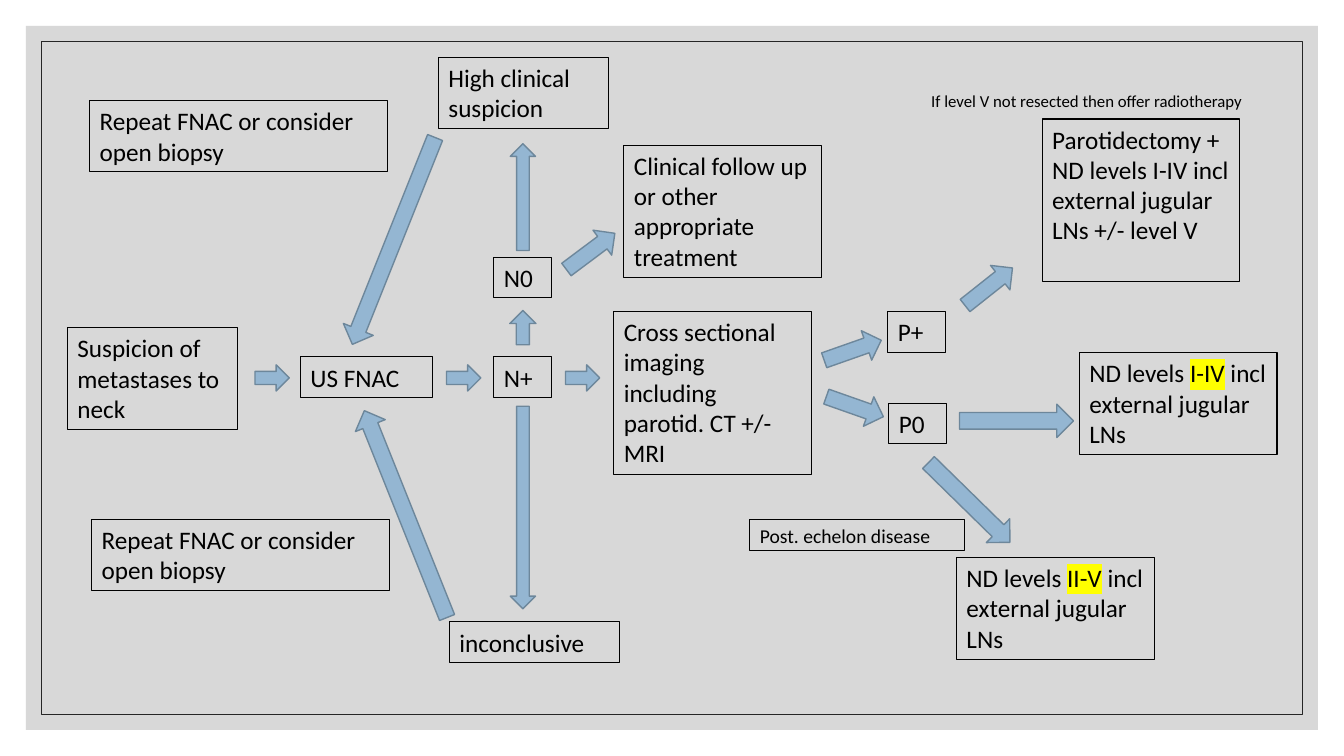
from lxml import etree
from pptx import Presentation
from pptx.dml.color import RGBColor
from pptx.enum.shapes import MSO_SHAPE
from pptx.enum.text import MSO_ANCHOR, PP_ALIGN
from pptx.oxml.ns import qn
from pptx.util import Pt

RECTANGLE = MSO_SHAPE.RECTANGLE
RIGHT_ARROW = MSO_SHAPE.RIGHT_ARROW
TOP = MSO_ANCHOR.TOP
LEFT = PP_ALIGN.LEFT

THEME = {
    "font": "Calibri",
    "step_size": 18,
    "remark_size": 14,
    "note_size": 12,
    "text": "000000",
    "panel": "BFBFBF",
    "panel_opacity": 60,
    "frame": "262626",
    "arrow": "94B6D2",
    "arrow_edge": "6D879B",
    "highlight": "FFFF00",
}

SLIDE_WIDTH, SLIDE_HEIGHT = 960, 540
PANEL_MARGIN, FRAME_MARGIN = 18.6, 29.4

# Box widths
MARK, SITE, STEP, PLAN, ADVICE = 41, 94.3, 121.7, 141.1, 212.4
# Text line height and the padding above and below it
LINE_HEIGHT, PADDING = 21.8, 7.2

# left, top, width, lines of room, text pieces (a tuple holds a highlighted piece)
STEPS = [
    (48.2, 234, STEP, 3, ["Suspicion of metastases to neck"]),
    (214.6, 254.9, SITE, 1, ["US FNAC"]),
    (352.8, 254.9, MARK, 1, ["N+"]),
    (352.8, 183.6, MARK, 1, ["N0"]),
    (321.1, 444.2, STEP, 1, ["inconclusive"]),
    (313.2, 41, STEP, 2, ["High clinical suspicion"]),
    (64.1, 72, ADVICE, 2, ["Repeat FNAC or consider open biopsy"]),
    (65.5, 370.8, ADVICE, 2, ["Repeat FNAC or consider open biopsy"]),
    (445.7, 103.7, PLAN, 4, ["Clinical follow up or other appropriate treatment"]),
    (438.5, 222.5, PLAN, 5, ["Cross sectional imaging including parotid. CT +/-MRI"]),
    (634.3, 222.5, MARK, 1, ["P+"]),
    (635, 288, MARK, 1, ["P0"]),
    (744.5, 85, PLAN, 5,
     ["Parotidectomy + ND levels I-IV incl external jugular LNs +/- level V"]),
    (771.1, 252, PLAN, 3, ["ND levels ", ("I-IV",), " incl external jugular LNs"]),
    (683.3, 398.2, PLAN, 3, ["ND levels ", ("II-V",), " incl external jugular LNs"]),
]
REMARK = (535.7, 370.8, 153.4, 22.3, ["Post. echelon disease"])
NOTE = (658.1, 61.2, 253.4, 36, ["If level V not resected then offer radiotherapy"])

# Arrow length and thickness
HOP, BRANCH, REACH, RETURN = (24.5, 18.7), (43.2, 22.3), (81.4, 23.8), (159.1, 23)
RISE, DROP = (76.3, 18), (144.7, 18)
MAIN_ROW, NODE_COLUMN = 270, 373.5

# centre x, centre y, size, clockwise angle
ARROWS = [
    (194.4, MAIN_ROW, HOP, 0),
    (331.2, MAIN_ROW, HOP, 0),
    (416.2, MAIN_ROW, HOP, 0),
    (NODE_COLUMN, 234, HOP, 270),
    (NODE_COLUMN, 140.8, RISE, 270),
    (NODE_COLUMN, 362.5, DROP, 90),
    (289.8, 367.2, RETURN, 248.2),
    (281.2, 172.1, RETURN, 111.8),
    (421.9, 179.6, BRANCH, 323.2),
    (609.1, 250.2, BRANCH, 340.6),
    (610.6, 290.5, BRANCH, 19.4),
    (706.3, 204.8, BRANCH, 321.6),
    (726.1, 300.6, REACH, 0),
    (692.3, 358.9, REACH, 44.4),
]


def colour(name):
    return RGBColor.from_string(THEME[name])


def add_preset(slide, preset, left, top, width, height, fill=None, edge=None, weight=1):
    shape = slide.shapes.add_shape(preset, Pt(left), Pt(top), Pt(width), Pt(height))
    shape.shadow.inherit = False
    if fill:
        shape.fill.solid()
        shape.fill.fore_color.rgb = colour(fill)
    else:
        shape.fill.background()
    if edge:
        shape.line.color.rgb = colour(edge)
        shape.line.width = Pt(weight)
    else:
        shape.line.fill.background()
    return shape


def add_inset(slide, margin, **style):
    """Add a rectangle that keeps the same margin to every slide edge."""
    return add_preset(slide, RECTANGLE, margin, margin,
                      SLIDE_WIDTH - 2 * margin, SLIDE_HEIGHT - 2 * margin, **style)


def set_opacity(shape, percent):
    fill_colour = shape._element.spPr.find(qn("a:solidFill"))[0]
    etree.SubElement(fill_colour, qn("a:alpha")).set("val", str(percent * 1000))


def highlight(run):
    """Mark a run whose font colour is already set."""
    mark = etree.Element(qn("a:highlight"))
    etree.SubElement(mark, qn("a:srgbClr")).set("val", THEME["highlight"])
    run._r.rPr.find(qn("a:solidFill")).addnext(mark)


def add_label(slide, left, top, width, height, pieces, size, outlined=True):
    label = slide.shapes.add_textbox(Pt(left), Pt(top), Pt(width), Pt(height))
    if outlined:
        label.line.color.rgb = colour("text")
        label.line.width = Pt(0.75)
    frame = label.text_frame
    frame.word_wrap = True
    frame.vertical_anchor = TOP
    paragraph = frame.paragraphs[0]
    paragraph.alignment = LEFT
    for piece in pieces:
        marked = isinstance(piece, tuple)
        run = paragraph.add_run()
        run.text = piece[0] if marked else piece
        run.font.name = THEME["font"]
        run.font.size = Pt(THEME[size])
        run.font.color.rgb = colour("text")
        if marked:
            highlight(run)


def main():
    deck = Presentation()
    deck.slide_width, deck.slide_height = Pt(SLIDE_WIDTH), Pt(SLIDE_HEIGHT)
    slide = deck.slides.add_slide(deck.slide_layouts[6])

    panel = add_inset(slide, PANEL_MARGIN, fill="panel")
    set_opacity(panel, THEME["panel_opacity"])
    add_inset(slide, FRAME_MARGIN, edge="frame", weight=0.5)

    for left, top, width, lines, pieces in STEPS:
        add_label(slide, left, top, width, PADDING + lines * LINE_HEIGHT, pieces, "step_size")

    for centre_x, centre_y, (length, thickness), angle in ARROWS:
        arrow = add_preset(slide, RIGHT_ARROW, centre_x - length / 2, centre_y - thickness / 2,
                           length, thickness, fill="arrow", edge="arrow_edge")
        arrow.rotation = angle

    add_label(slide, *REMARK, "remark_size")
    add_label(slide, *NOTE, "note_size", outlined=False)
    deck.save("out.pptx")


if __name__ == "__main__":
    main()
